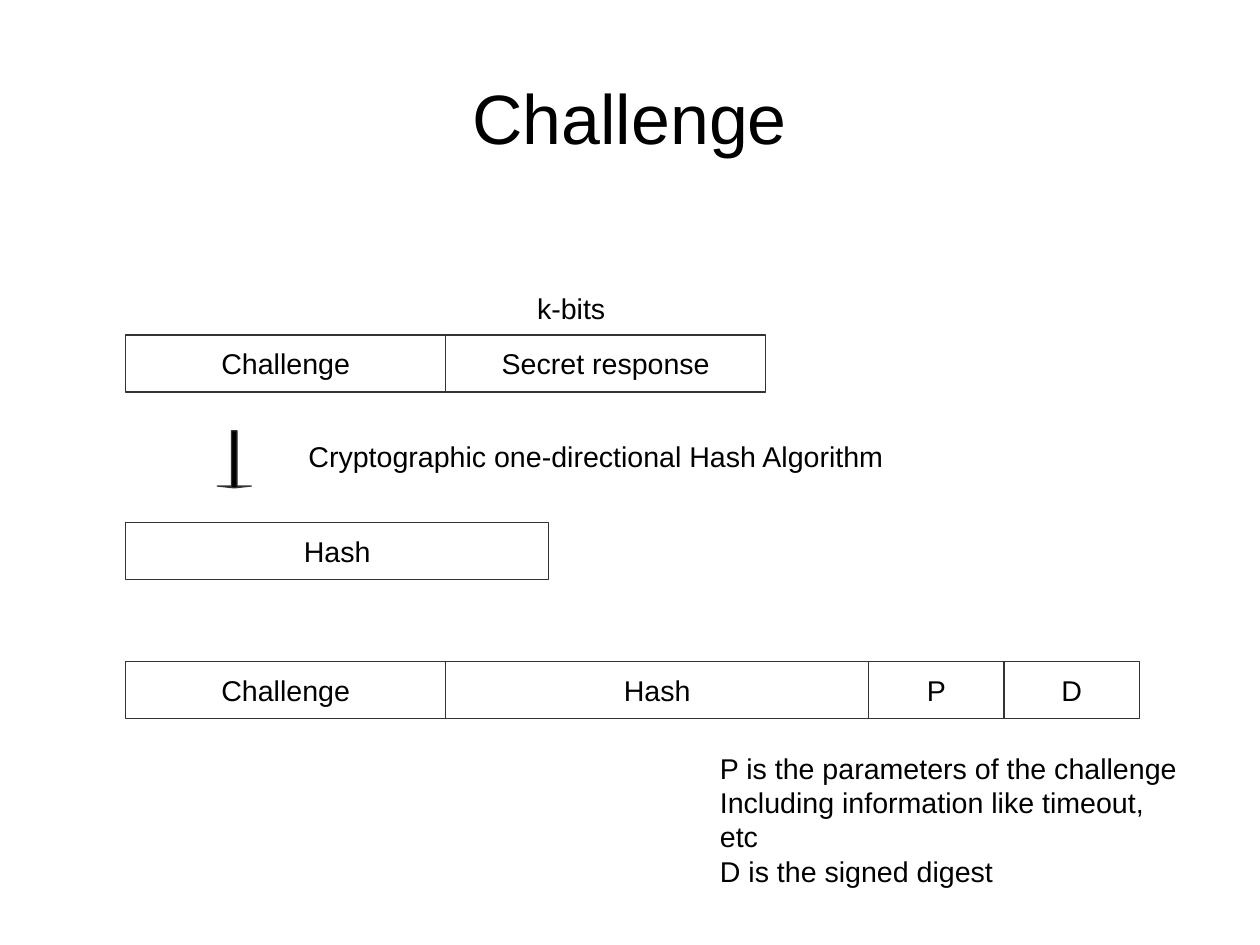
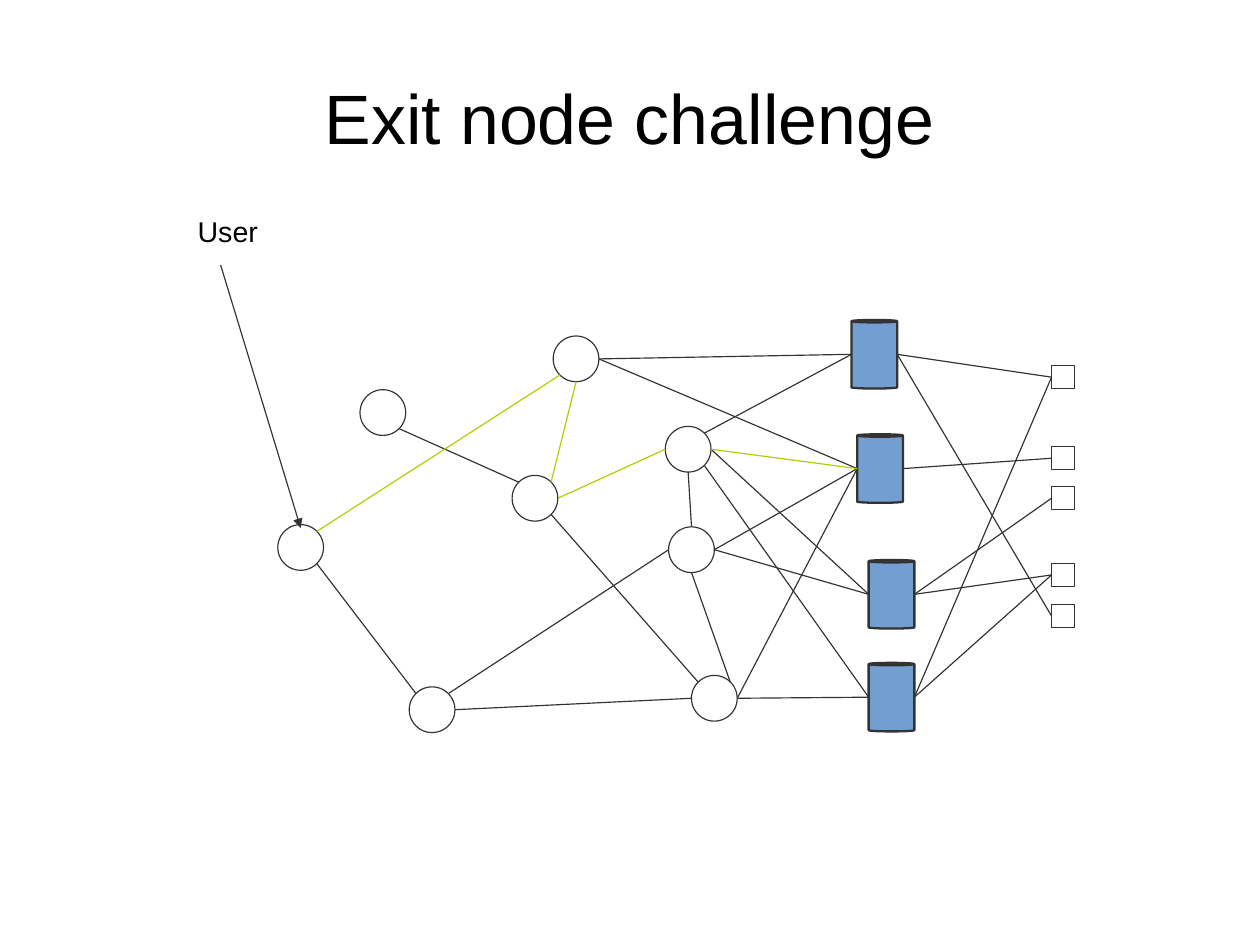
from lxml.etree import SubElement
from pptx import Presentation
from pptx.dml.color import RGBColor
from pptx.enum.shapes import MSO_CONNECTOR as Connector, MSO_SHAPE as Shape
from pptx.enum.text import MSO_ANCHOR as Anchor, PP_ALIGN as Align
from pptx.oxml.ns import qn
from pptx.util import Pt

FONT = "Arial"
BLACK, OUTLINE, ROUTE, EXIT_FILL = "000000", "333333", "AECF00", "729FCF"
SLIDE_SIZE = (793.7, 595.3)
TITLE_BOX = (39.6, 23.8, 714.2, 99.2)
TITLE_SIZE, TEXT_SIZE = 44, 18
LINE_WIDTH, EXIT_LINE_WIDTH = 0.75, 1.45

ROW_HEIGHT = 36
CHALLENGE = ("Challenge", 201.6)
SECRET = ("Secret response", 201.6)
HASH = ("Hash", 266.4)
PARAMETERS, DIGEST = ("P", 85.3), ("D", 85.3)

RELAY_SIZE, EXIT_SIZE, HOST_SIZE = (28.8, 28.8), (28.8, 43.2), (14.4, 14.4)
RELAYS = {
    "user": (0, 128.9), "mid": (147.6, 97.9), "left": (51.8, 43.9),
    "inner": (246.2, 130.3), "top": (173.5, 10.1), "upper": (244.1, 67),
    "low": (82.8, 231.1), "bottom": (260.6, 223.9),
}
EXITS = {
    "exit1": (361.4, 0), "exit2": (365, 72),
    "exit3": (372.2, 151.2), "exit4": (372.2, 216),
}
HOST_LEFT = 487.4
HOST_TOPS = (28.8, 79.9, 105.1, 153.4, 179.3)
NEAR, FAR = 0.15, 0.85
SITES = {
    "n": (0.5, 0), "ne": (FAR, NEAR), "e": (1, 0.5), "se": (FAR, FAR),
    "s": (0.5, 1), "sw": (NEAR, FAR), "w": (0, 0.5), "nw": (NEAR, NEAR),
}
ROUTE_LINKS = (
    "user ne top sw", "mid ne top s", "mid e upper w", "upper e exit2 w",
)
PLAIN_LINKS = (
    "user se low nw", "low ne inner w", "left se mid nw", "upper s inner n",
    "low e bottom w", "bottom ne inner s", "mid se bottom nw",
    "top e exit1 w", "top e exit2 w", "upper ne exit1 w", "upper e exit3 w",
    "upper se exit4 w", "inner e exit2 w", "inner e exit3 w",
    "bottom e exit4 w", "bottom e exit2 w",
)
HOST_LINKS = (
    ("exit1", 0), ("exit2", 1), ("exit3", 2), ("exit4", 3),
    ("exit3", 3), ("exit1", 4), ("exit4", 0),
)


def color(hex_string):
    return RGBColor.from_string(hex_string)


def points(*lengths):
    return [Pt(length) for length in lengths]


def write(frame, lines, size=TEXT_SIZE, align=Align.LEFT):
    frame.text = "\n".join(lines)
    for paragraph in frame.paragraphs:
        paragraph.alignment = align
        paragraph.font.name = FONT
        paragraph.font.size = Pt(size)
        paragraph.font.color.rgb = color(BLACK)


def add_titled_slide(deck, heading):
    slide = deck.slides.add_slide(deck.slide_layouts[5])
    title = slide.shapes.title
    title.left, title.top, title.width, title.height = points(*TITLE_BOX)
    frame = title.text_frame
    frame.margin_left = frame.margin_top = 0
    frame.margin_right = frame.margin_bottom = 0
    frame.vertical_anchor = Anchor.MIDDLE
    write(frame, [heading], TITLE_SIZE, Align.CENTER)
    return slide


def add_label(slide, left, top, width, height, *lines):
    label = slide.shapes.add_textbox(*points(left, top, width, height))
    label.text_frame.word_wrap = True
    write(label.text_frame, lines)


def add_outlined(slide, preset, box, fill=None, line_width=LINE_WIDTH):
    part = slide.shapes.add_shape(preset, *points(*box))
    part.shadow.inherit = False
    if fill:
        part.fill.solid()
        part.fill.fore_color.rgb = color(fill)
    else:
        part.fill.background()
    part.line.color.rgb = color(OUTLINE)
    part.line.width = Pt(line_width)
    return part


def add_link(slide, start, end, hue=OUTLINE, arrow=False):
    link = slide.shapes.add_connector(
        Connector.STRAIGHT, *points(*start, *end))
    link.line.color.rgb = color(hue)
    link.line.width = Pt(LINE_WIDTH)
    properties = link.element.spPr
    if arrow:
        SubElement(properties.find(qn("a:ln")), qn("a:tailEnd"),
                   type="triangle")
    SubElement(properties, qn("a:effectLst"))
    return link


def add_field_row(slide, left, top, *fields):
    for caption, width in fields:
        field = add_outlined(
            slide, Shape.RECTANGLE, (left, top, width, ROW_HEIGHT))
        field.text_frame.word_wrap = False
        field.text_frame.vertical_anchor = Anchor.MIDDLE
        write(field.text_frame, [caption], align=Align.CENTER)
        left += width


def add_hash_scheme(slide, left, top):
    add_label(slide, left + 252, top, 60, 27, "k-bits")
    add_field_row(slide, left, top + 31, CHALLENGE, SECRET)
    hashing = add_outlined(slide, Shape.DOWN_ARROW,
                           (left + 57.6, top + 91.4, 21.6, 36), BLACK)
    hashing.adjustments[0] = 0.162
    hashing.adjustments[1] = 0.054
    add_label(slide, left + 108, top + 92.9, 440.6, 27,
              "Cryptographic one-directional Hash Algorithm")
    add_field_row(slide, left, top + 149, HASH)
    add_field_row(slide, left, top + 236.9,
                  CHALLENGE, HASH, PARAMETERS, DIGEST)
    add_label(slide, left + 367.2, top + 289.4, 309.6, 68,
              "P is the parameters of the challenge",
              "Including information like timeout, etc",
              "D is the signed digest")


def add_network(slide, left, top):
    boxes = {}
    for places, size in ((RELAYS, RELAY_SIZE), (EXITS, EXIT_SIZE)):
        for name, (x, y) in places.items():
            boxes[name] = (left + x, top + y, *size)

    def site(name, side):
        x, y, width, height = boxes[name]
        across, down = SITES[side]
        return x + across * width, y + down * height

    for name in RELAYS:
        add_outlined(slide, Shape.OVAL, boxes[name])
    for name in EXITS:
        node = add_outlined(
            slide, Shape.CAN, boxes[name], EXIT_FILL, EXIT_LINE_WIDTH)
        node.adjustments[0] = 0.054
    hosts = [
        add_outlined(slide, Shape.RECTANGLE,
                     (left + HOST_LEFT, top + host_top, *HOST_SIZE))
        for host_top in HOST_TOPS
    ]
    for links, hue in ((PLAIN_LINKS, OUTLINE), (ROUTE_LINKS, ROUTE)):
        for link in links:
            source, source_side, target, target_side = link.split()
            add_link(slide, site(source, source_side),
                     site(target, target_side), hue)
    for name, index in HOST_LINKS:
        start = site(name, "e")
        add_link(slide, start, start).end_connect(hosts[index], 1)

    add_label(slide, left - 57.6, top - 70.6, 54, 27, "User")
    add_link(slide, (left - 36, top - 34.6), (left + 14.4, top + 131),
             arrow=True)


def main():
    deck = Presentation()
    deck.slide_width, deck.slide_height = points(*SLIDE_SIZE)
    add_hash_scheme(add_titled_slide(deck, "Challenge"), 79.2, 180)
    add_network(add_titled_slide(deck, "Exit node challenge"), 175, 201.6)
    deck.save("out.pptx")


if __name__ == "__main__":
    main()
